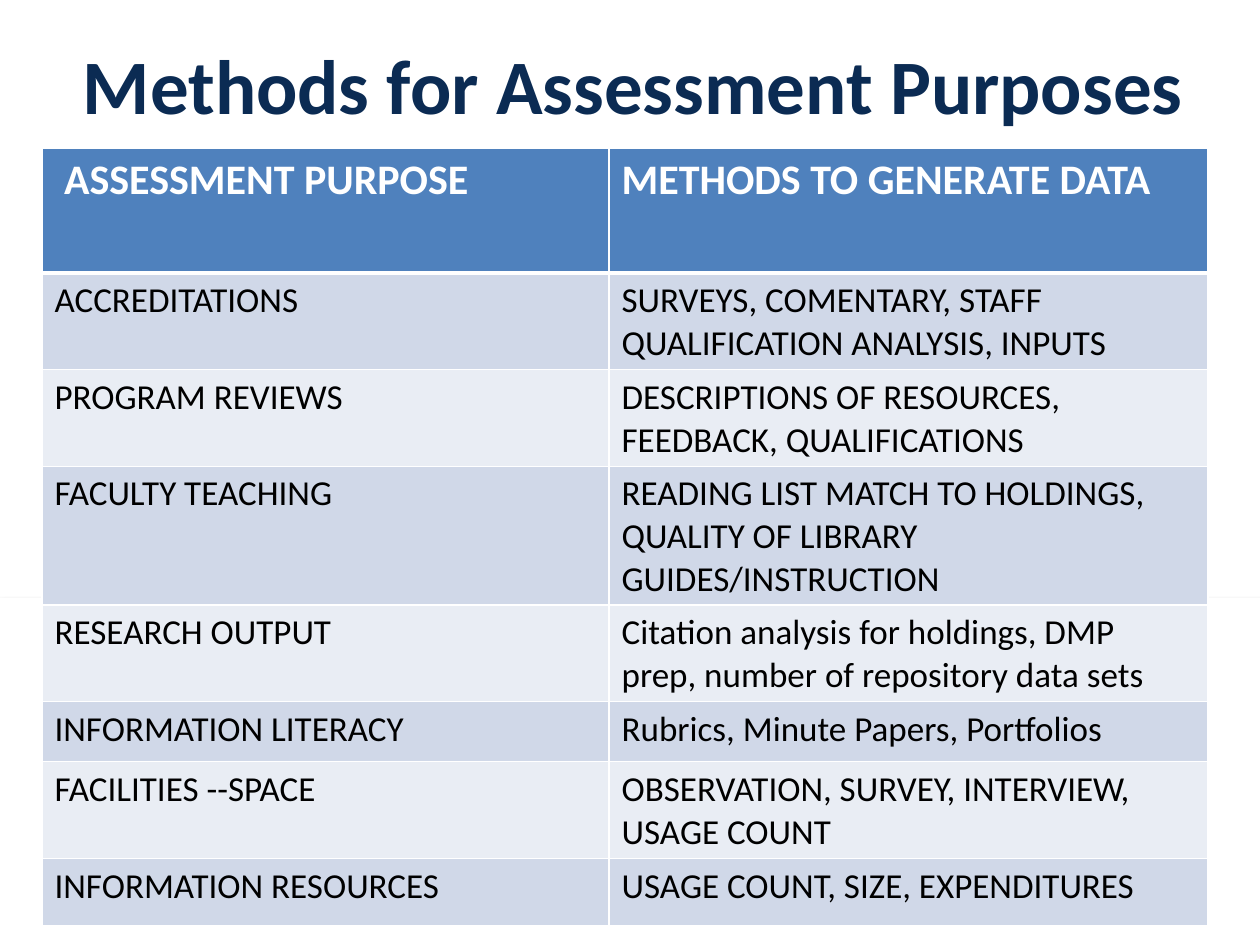
from lxml.etree import SubElement
from pptx import Presentation
from pptx.dml.color import RGBColor
from pptx.enum.shapes import MSO_SHAPE
from pptx.enum.text import MSO_ANCHOR, PP_ALIGN
from pptx.oxml import parse_xml
from pptx.oxml.ns import nsdecls, qn
from pptx.util import Emu, Pt

TITLE = "Methods for Assessment Purposes"
HEADER = (" ASSESSMENT PURPOSE", "METHODS TO GENERATE DATA")
METHODS = [
    ("ACCREDITATIONS", "SURVEYS, COMENTARY, STAFF QUALIFICATION ANALYSIS, INPUTS"),
    ("PROGRAM REVIEWS", "DESCRIPTIONS OF RESOURCES, FEEDBACK, QUALIFICATIONS"),
    ("FACULTY TEACHING",
     "READING LIST MATCH TO HOLDINGS, QUALITY OF LIBRARY GUIDES/INSTRUCTION"),
    ("RESEARCH OUTPUT",
     "Citation analysis for holdings, DMP prep, number of repository data sets"),
    ("INFORMATION LITERACY", "Rubrics, Minute Papers, Portfolios"),
    ("FACILITIES --SPACE", "OBSERVATION, SURVEY, INTERVIEW, USAGE COUNT"),
    ("INFORMATION RESOURCES", "USAGE COUNT, SIZE, EXPENDITURES"),
]
COLUMN_WIDTHS = (567, 599)
ROW_HEIGHTS = (125, 92, 92, 132, 60, 60, 97, 67)
TABLE_BOX = (42, 148, sum(COLUMN_WIDTHS), 777)
TITLE_BOX = (63, 21, 1134, 126)
PANEL_BOX = (0, 599, 1281, 368)

FONT = "Calibri"
WHITE = RGBColor(0xFF, 0xFF, 0xFF)
BLACK = RGBColor(0x00, 0x00, 0x00)
NAVY = RGBColor(0x0B, 0x2B, 0x53)
BLUE = RGBColor(0x4F, 0x81, 0xBD)
BANDS = (RGBColor(0xD0, 0xD8, 0xE8), RGBColor(0xE9, 0xED, 0xF4))


def px(length):
    return Emu(length * 914400 // 126)


def place(box):
    return [px(length) for length in box]


def style_text(paragraph, size, color, bold):
    for run in paragraph.runs:
        run.font.name = FONT
        run.font.size = Pt(size)
        run.font.bold = bold
        run.font.color.rgb = color


def add_borders(cell, bottom_width):
    properties = cell._tc.get_or_add_tcPr()
    widths = {"lnL": 1, "lnR": 1, "lnT": 1, "lnB": bottom_width}
    for side, width in widths.items():
        line = SubElement(properties, qn(f"a:{side}"), w=str(Pt(width)))
        fill = SubElement(line, qn("a:solidFill"))
        SubElement(fill, qn("a:srgbClr"), val=str(WHITE))


def add_panel(slide):
    panel = slide.shapes.add_shape(MSO_SHAPE.RECTANGLE, *place(PANEL_BOX))
    panel.fill.solid()
    panel.fill.fore_color.rgb = WHITE
    panel.line.color.rgb = WHITE
    panel.line.width = Pt(0.75)
    panel._element.spPr.append(parse_xml(
        f'<a:effectLst {nsdecls("a")}>'
        f'<a:outerShdw blurRad="{Pt(3.1)}" dist="{Pt(1.8)}" dir="5400000" rotWithShape="0">'
        '<a:srgbClr val="000000"><a:alpha val="35000"/></a:srgbClr>'
        '</a:outerShdw></a:effectLst>'))


def add_title(slide):
    text_frame = slide.shapes.add_textbox(*place(TITLE_BOX)).text_frame
    text_frame.word_wrap = True
    text_frame.vertical_anchor = MSO_ANCHOR.MIDDLE
    text_frame.text = TITLE
    paragraph = text_frame.paragraphs[0]
    paragraph.alignment = PP_ALIGN.RIGHT
    style_text(paragraph, 44, NAVY, True)


def add_methods_table(slide):
    rows = [HEADER, *METHODS]
    frame = slide.shapes.add_table(len(rows), len(HEADER), *place(TABLE_BOX))
    table = frame.table
    for column, width in zip(table.columns, COLUMN_WIDTHS):
        column.width = px(width)
    for row, height in zip(table.rows, ROW_HEIGHTS):
        row.height = px(height)
    frame.height = px(TABLE_BOX[3])
    for index, texts in enumerate(rows):
        is_header = index == 0
        for cell, text in zip(table.rows[index].cells, texts):
            cell.text_frame.text = text
            add_borders(cell, 3 if is_header else 1)
            cell.fill.solid()
            cell.fill.fore_color.rgb = BLUE if is_header else BANDS[(index - 1) % 2]
            style_text(cell.text_frame.paragraphs[0], 24 if is_header else 20,
                       WHITE if is_header else BLACK, is_header)


def main():
    presentation = Presentation()
    presentation.slide_width = px(1260)
    presentation.slide_height = px(945)
    slide = presentation.slides.add_slide(presentation.slide_layouts[6])
    add_panel(slide)
    add_title(slide)
    add_methods_table(slide)
    presentation.save("out.pptx")


if __name__ == "__main__":
    main()
